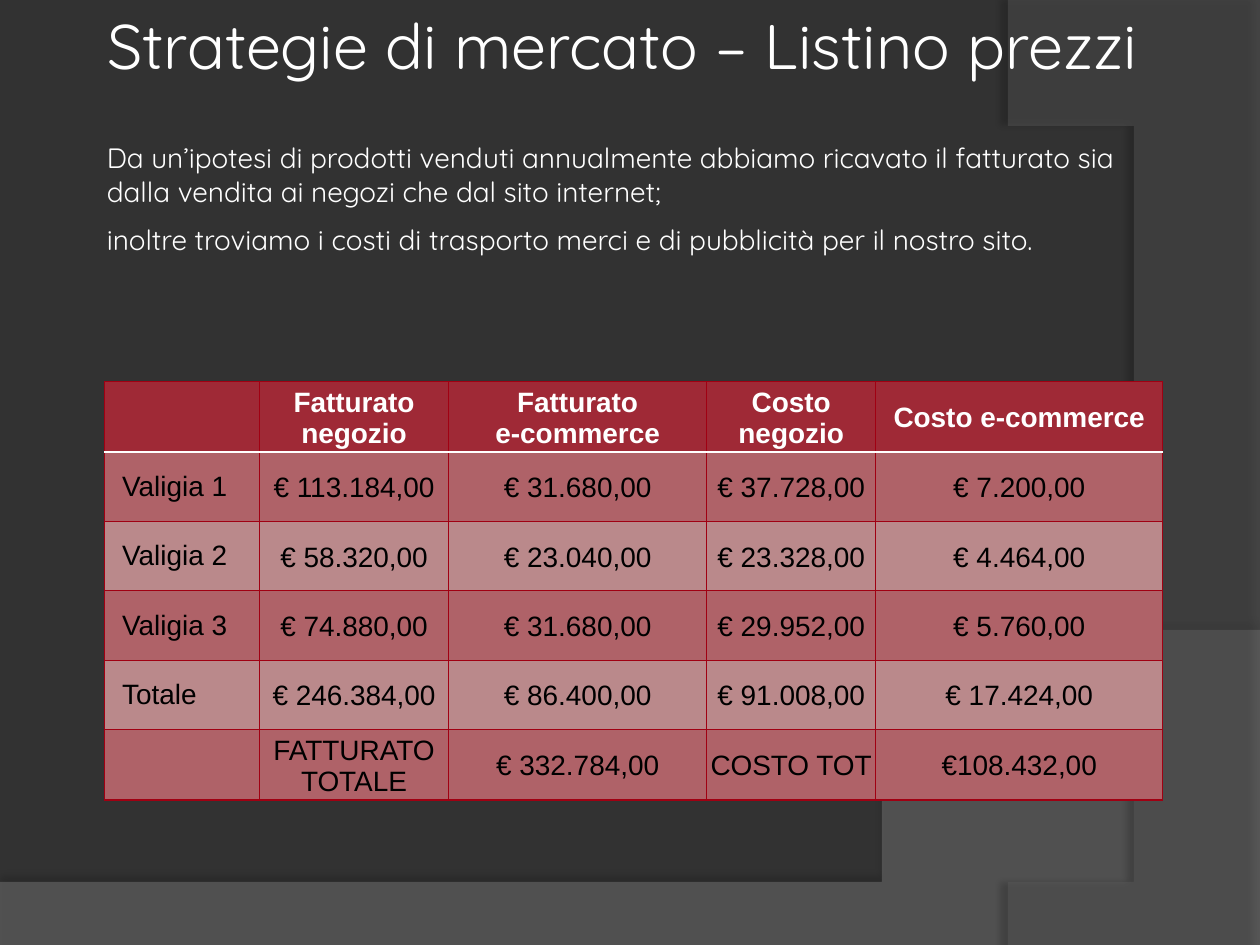
from lxml import etree
from pptx import Presentation
from pptx.dml.color import RGBColor
from pptx.enum.text import MSO_ANCHOR as ANCHOR, MSO_AUTO_SIZE as FIT, PP_ALIGN as ALIGN
from pptx.oxml.ns import qn
from pptx.util import Inches, Pt

COLORS = {
    "background": "323232", "wave": "7F7F7F", "arc": "5E5E5E", "shadow": "000000",
    "header": "9F2936", "odd": "AF6268", "even": "BA898B", "border": "A00012",
    "light": "FFFFFF", "dark": "000000",
}
TITLE = "Strategie di mercato – Listino prezzi"
INTRO = [
    "Da un’ipotesi di prodotti venduti annualmente abbiamo ricavato il fatturato "
    "sia dalla vendita ai negozi che dal sito internet;",
    "inoltre troviamo i costi di trasporto merci e di pubblicità per il nostro sito.",
]
PRICES = [
    ["", "Fatturato negozio", "Fatturato\ne-commerce", "Costo negozio", "Costo e-commerce"],
    ["Valigia 1", "€ 113.184,00", "€ 31.680,00", "€ 37.728,00", "€ 7.200,00"],
    ["Valigia 2", "€ 58.320,00", "€ 23.040,00", "€ 23.328,00", "€ 4.464,00"],
    ["Valigia 3", "€ 74.880,00", "€ 31.680,00", "€ 29.952,00", "€ 5.760,00"],
    ["Totale", "€ 246.384,00", "€ 86.400,00", "€ 91.008,00", "€ 17.424,00"],
    ["", "FATTURATO TOTALE", "€ 332.784,00", "COSTO TOT", "€108.432,00"],
]


def rgb(name):
    return RGBColor.from_string(COLORS[name])


def add_color(parent, name, alpha=None):
    clr = etree.SubElement(parent, qn("a:srgbClr"), val=COLORS[name])
    if alpha is not None:
        etree.SubElement(clr, qn("a:alpha"), val=str(alpha * 1000))


def bezier(p0, p1, p2, p3, steps=60):
    """Points along a cubic curve."""
    points = []
    for i in range(steps + 1):
        t = i / steps
        u = 1 - t
        weights = (u**3, 3 * u * u * t, 3 * u * t * t, t**3)
        points.append(tuple(sum(w * p[axis] for w, p in zip(weights, (p0, p1, p2, p3)))
                            for axis in (0, 1)))
    return points


class SlideBuilder:
    title_font, table_font = "Quicksand", "Arial"
    title_size, text_size = Pt(36), Pt(16)

    def __init__(self, prs):
        self.slide = prs.slides.add_slide(prs.slide_layouts[5])
        fill = self.slide.background.fill
        fill.solid()
        fill.fore_color.rgb = rgb("background")

    def format_runs(self, p, font, size, color, bold=False):
        for r in p.runs:
            r.font.name, r.font.size, r.font.bold = font, size, bold
            r.font.color.rgb = rgb(color)

    def swoosh(self, points, color, alpha, shadow_alpha, distance, angle):
        builder = self.slide.shapes.build_freeform(*points[0], scale=Inches(1))
        builder.add_line_segments(points[1:], close=True)
        sp = builder.convert_to_shape()
        sp.line.fill.background()
        sp.fill.solid()
        sp.fill.fore_color.rgb = rgb(color)
        clr = sp.element.spPr.find(qn("a:solidFill"))[0]
        etree.SubElement(clr, qn("a:alpha"), val=str(alpha * 1000))
        sp.shadow.inherit = False
        effects = sp.element.spPr.find(qn("a:effectLst"))
        shadow = etree.SubElement(effects, qn("a:outerShdw"), blurRad=str(Pt(4)),
                                  dist=str(Pt(distance)), dir=str(angle * 60000),
                                  algn="ctr", rotWithShape="0")
        add_color(shadow, "shadow", shadow_alpha)

    def title(self, text, left, top, width, height):
        sp = self.slide.shapes.title
        sp.left, sp.top, sp.width, sp.height = map(Inches, (left, top, width, height))
        tf = sp.text_frame
        tf.text = text
        tf.word_wrap, tf.auto_size, tf.vertical_anchor = True, FIT.NONE, ANCHOR.TOP
        p = tf.paragraphs[0]
        p.alignment = ALIGN.LEFT
        self.format_runs(p, self.title_font, self.title_size, "light")
        # Bring the title in front of the background shapes
        self.slide.shapes.element.append(sp.element)

    def text(self, paragraphs, left, top, width, height):
        sp = self.slide.shapes.add_textbox(*map(Inches, (left, top, width, height)))
        tf = sp.text_frame
        tf.word_wrap = True
        tf.text = "\n".join(paragraphs)
        for i, p in enumerate(tf.paragraphs):
            if i:
                p.space_before = Pt(8)
            self.format_runs(p, self.title_font, self.text_size, "light")

    def borders(self, cell, row):
        tcPr = cell._tc.get_or_add_tcPr()
        for i, side in enumerate("LRTB"):
            under_header = (row, side) in ((0, "B"), (1, "T"))
            ln = etree.Element(qn(f"a:ln{side}"), w=str(Pt(1.5 if under_header else 0.75)))
            fill = etree.SubElement(ln, qn("a:solidFill"))
            add_color(fill, "light" if under_header else "border")
            tcPr.insert(i, ln)

    def cell(self, cell, text, row, col):
        is_header, is_label = row == 0, col == 0
        cell.fill.solid()
        cell.fill.fore_color.rgb = rgb("header" if is_header else "odd" if row % 2 else "even")
        cell.vertical_anchor = ANCHOR.MIDDLE
        side, top, bottom = (0.14, 0.07, 0.07) if is_label else (0.02, 0.02, 0)
        cell.margin_left = cell.margin_right = Inches(side)
        cell.margin_top, cell.margin_bottom = Inches(top), Inches(bottom)
        cell.text_frame.text = text
        for p in cell.text_frame.paragraphs:
            p.alignment = ALIGN.LEFT if is_label else ALIGN.CENTER
            self.format_runs(p, self.table_font, self.text_size,
                             "light" if is_header else "dark", is_header)
        self.borders(cell, row)

    def table(self, data, left, top, widths, heights):
        box = map(Inches, (left, top, sum(widths), sum(heights)))
        table = self.slide.shapes.add_table(len(data), len(data[0]), *box).table
        table.horz_banding = False
        for column, width in zip(table.columns, widths):
            column.width = Inches(width)
        for i, (row, height) in enumerate(zip(data, heights)):
            table.rows[i].height = Inches(height)
            for j, text in enumerate(row):
                self.cell(table.cell(i, j), text, i, j)


def main():
    prs = Presentation()
    prs.slide_width, prs.slide_height = Inches(10), Inches(7.5)
    s = SlideBuilder(prs)

    # Background swooshes
    wave = [(0, 7.5), (10, 7.5)] + bezier((10, 5.2), (5.59, 7.29), (3.91, 7.19), (0, 7.05))
    s.swoosh(wave, "wave", 45, 35, 3.5, 270)
    arc = [(10, 0.02), (10, 7.5)] + bezier((8.21, 7.5), (9.35, 6.19), (10.18, 3), (8, 0))
    s.swoosh(arc, "arc", 40, 45, 4, 180)

    # Price table
    s.table(PRICES, 0.83, 3.03, [1.23, 1.5, 2.05, 1.34, 2.28], [0.56] + [0.55] * 4 + [0.56])

    # Title and introduction
    s.title(TITLE, 0.75, 0, 9.25, 0.71)
    s.text(INTRO, 0.75, 1.07, 8.58, 1.04)

    prs.save("out.pptx")


if __name__ == "__main__":
    main()
